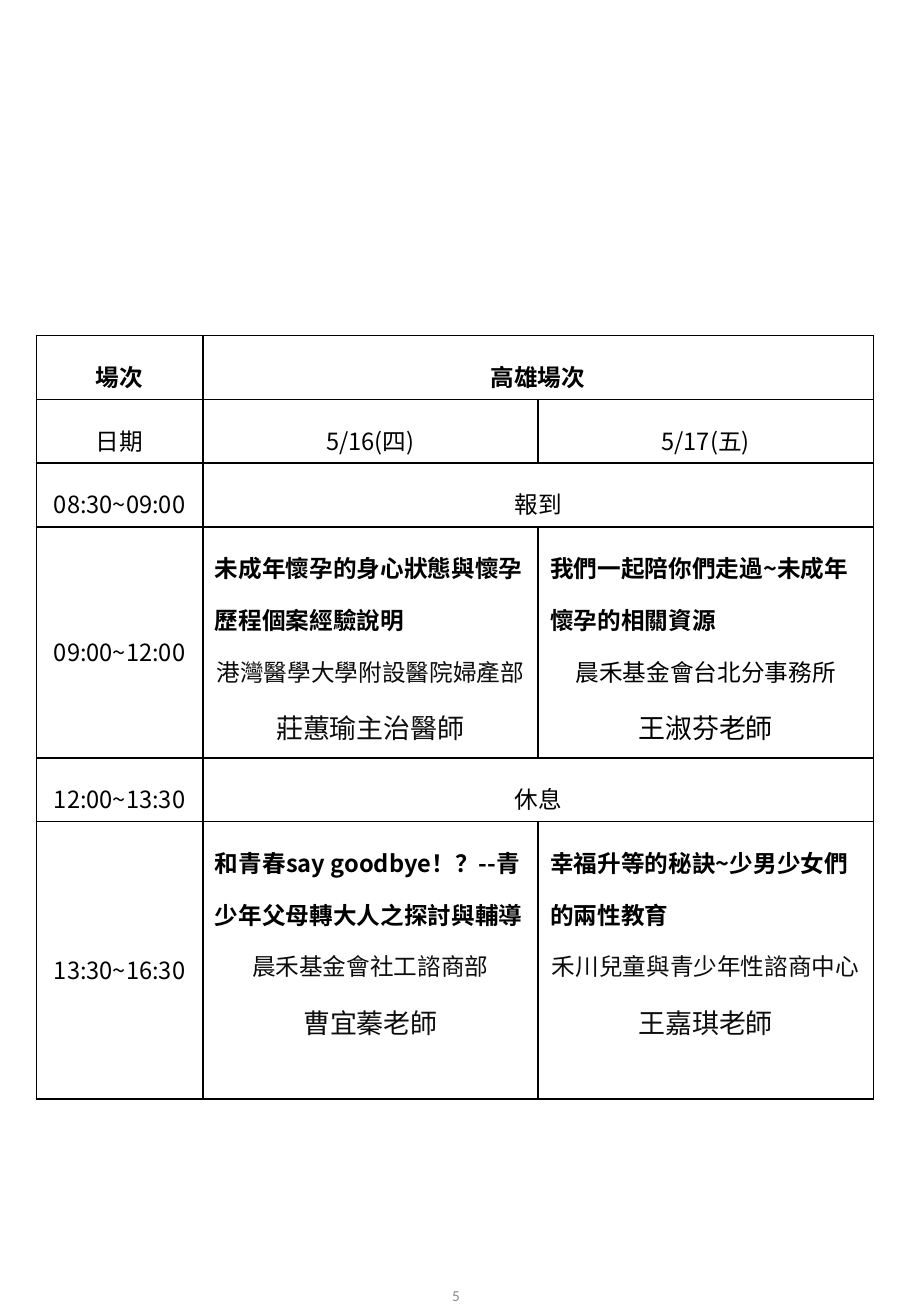
from dataclasses import dataclass

from lxml.etree import SubElement
from pptx import Presentation
from pptx.dml.color import RGBColor as Color
from pptx.enum.text import MSO_ANCHOR as Anchor, PP_ALIGN as Align
from pptx.oxml.ns import qn
from pptx.util import Inches, Pt


@dataclass(frozen=True)
class Theme:
    font: str = "Noto Sans CJK SC"
    number_font: str = "Calibri"
    ink: str = "000000"
    soft_ink: str = "0D0D0D"
    paper: str = "FFFFFF"
    number_ink: str = "8C8C8C"
    body: int = 14
    speaker: int = 16
    number: int = 9
    border: int = 1
    line_spacing: float = 1.5


THEME = Theme()
SLIDE_WIDTH, SLIDE_HEIGHT = 7.5, 10.83
TABLE_LEFT, TABLE_TOP = 0.3, 2.76
COLUMN_WIDTHS = (1.37, 2.76, 2.76)
SINGLE_ROW, SESSION_ROW = 0.44, 1.9
NUMBER_BOX = (2.91, 10.37, 1.69, 0.58)


@dataclass(frozen=True)
class Line:
    text: str
    bold: bool = False
    size: int = THEME.body
    color: str = THEME.ink
    align: Align = Align.CENTER


def session(topic, institution, speaker, color=THEME.ink):
    return (
        Line(topic, bold=True, align=Align.LEFT),
        Line(institution, color=color),
        Line(speaker, size=THEME.speaker, color=color),
    )


SCHEDULE = (
    ((Line("場次", bold=True),), (Line("高雄場次", bold=True),)),
    ((Line("日期"),), (Line("5/16(四)"),), (Line("5/17(五)"),)),
    ((Line("08:30~09:00"),), (Line("報到"),)),
    (
        (Line("09:00~12:00"),),
        session("未成年懷孕的身心狀態與懷孕歷程個案經驗說明",
                "港灣醫學大學附設醫院婦產部", "莊蕙瑜主治醫師", THEME.soft_ink),
        session("我們一起陪你們走過~未成年懷孕的相關資源",
                "晨禾基金會台北分事務所", "王淑芬老師"),
    ),
    ((Line("12:00~13:30"),), (Line("休息"),)),
    (
        (Line("13:30~16:30"),),
        session("和青春say goodbye！？--青少年父母轉大人之探討與輔導",
                "晨禾基金會社工諮商部", "曹宜蓁老師", THEME.soft_ink),
        session("幸福升等的秘訣~少男少女們的兩性教育",
                "禾川兒童與青少年性諮商中心", "王嘉琪老師", THEME.soft_ink),
    ),
)
FIRST_SESSION_ROW = 3


def write_line(paragraph, line, font_name=THEME.font):
    paragraph.text = line.text
    paragraph.alignment = line.align
    font = paragraph.font
    font.size = Pt(line.size)
    font.bold = line.bold
    font.color.rgb = Color.from_string(line.color)
    font.name = font_name
    defaults = paragraph._p.get_or_add_pPr().find(qn("a:defRPr"))
    SubElement(defaults, qn("a:ea"), typeface=font_name)


def add_borders(cell):
    properties = cell._tc.get_or_add_tcPr()
    for side in ("lnL", "lnR", "lnT", "lnB"):
        border = SubElement(properties, qn(f"a:{side}"), w=str(Pt(THEME.border)))
        fill = SubElement(border, qn("a:solidFill"))
        SubElement(fill, qn("a:srgbClr"), val=THEME.ink)


def format_cell(cell):
    add_borders(cell)
    cell.fill.solid()
    cell.fill.fore_color.rgb = Color.from_string(THEME.paper)


def fill_cell(cell, lines):
    frame = cell.text_frame
    for index, line in enumerate(lines):
        paragraph = frame.add_paragraph() if index else frame.paragraphs[0]
        write_line(paragraph, line)
        paragraph.line_spacing = THEME.line_spacing


def add_schedule(slide):
    heights = [SESSION_ROW if any(len(lines) > 1 for lines in row) else SINGLE_ROW
               for row in SCHEDULE]
    frame = slide.shapes.add_table(
        len(SCHEDULE), len(COLUMN_WIDTHS), Inches(TABLE_LEFT), Inches(TABLE_TOP),
        Inches(sum(COLUMN_WIDTHS)), Inches(sum(heights)))
    table = frame.table
    table.first_row = table.horz_banding = False
    for column, width in zip(table.columns, COLUMN_WIDTHS):
        column.width = Inches(width)
    for row, height in zip(table.rows, heights):
        row.height = Inches(height)
    for cell in table.iter_cells():
        format_cell(cell)
    for row_index, row in enumerate(SCHEDULE):
        for column_index, lines in enumerate(row):
            fill_cell(table.cell(row_index, column_index), lines)
        if len(row) < len(COLUMN_WIDTHS):
            table.cell(row_index, 1).merge(table.cell(row_index, 2))
        if row_index >= FIRST_SESSION_ROW:
            table.cell(row_index, 0).vertical_anchor = Anchor.MIDDLE


def add_page_number(slide, number):
    box = slide.shapes.add_textbox(*map(Inches, NUMBER_BOX))
    frame = box.text_frame
    frame.word_wrap = True
    frame.vertical_anchor = Anchor.MIDDLE
    line = Line(number, size=THEME.number, color=THEME.number_ink)
    write_line(frame.paragraphs[0], line, THEME.number_font)


def main():
    presentation = Presentation()
    presentation.slide_width = Inches(SLIDE_WIDTH)
    presentation.slide_height = Inches(SLIDE_HEIGHT)
    blank_layout = presentation.slide_layouts.get_by_name("Blank")
    slide = presentation.slides.add_slide(blank_layout)
    add_schedule(slide)
    add_page_number(slide, "5")
    presentation.save("out.pptx")


if __name__ == "__main__":
    main()
